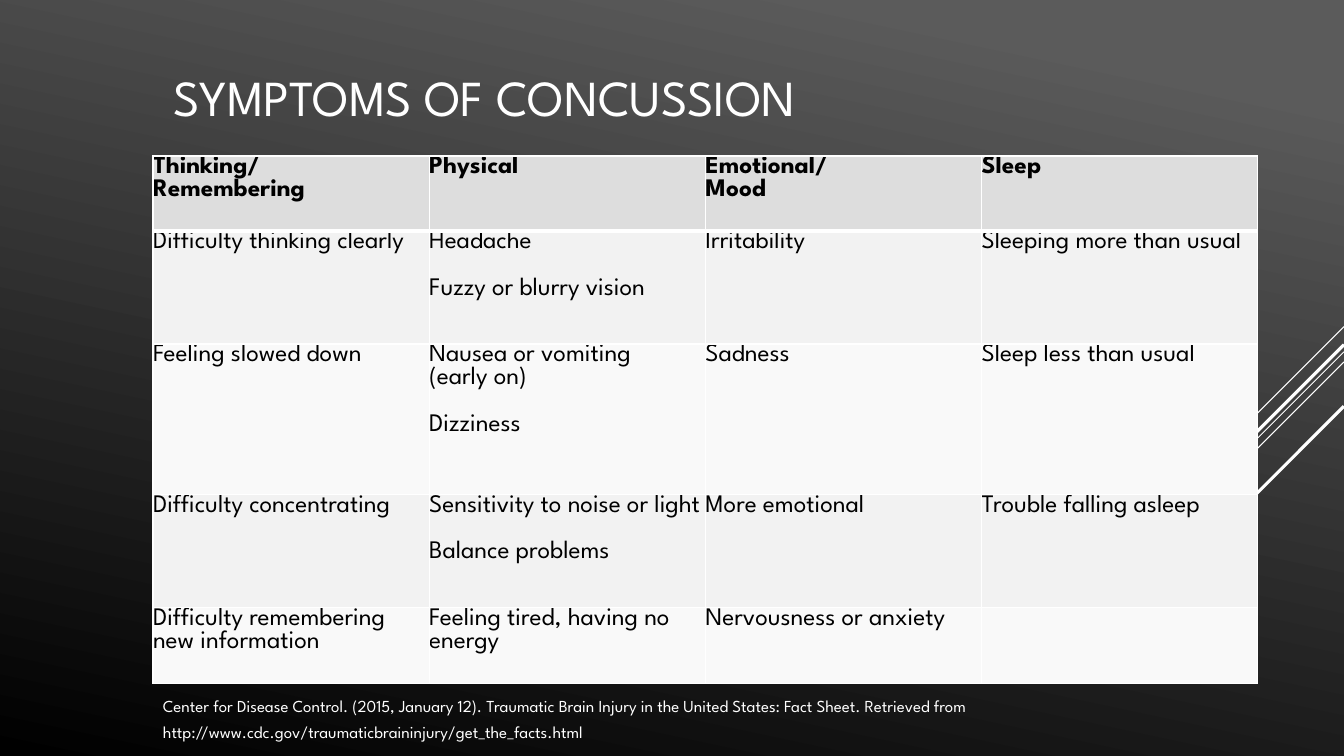
from lxml.etree import SubElement
from pptx import Presentation
from pptx.dml.color import RGBColor
from pptx.enum.shapes import MSO_CONNECTOR
from pptx.enum.text import MSO_ANCHOR
from pptx.oxml import parse_xml
from pptx.oxml.ns import nsdecls, qn
from pptx.util import Pt

FONT = "League Spartan"
WHITE = "FFFFFF"


def color(hex_text):
    return RGBColor.from_string(hex_text)


def style_text(frame, size, hex_text, bold=False):
    for paragraph in frame.paragraphs:
        paragraph.font.name = FONT
        paragraph.font.size = Pt(size)
        paragraph.font.bold = bold
        paragraph.font.color.rgb = color(hex_text)
        for run in paragraph.runs:
            run.font.name = FONT
            run.font.size = Pt(size)
            run.font.bold = bold
            run.font.color.rgb = color(hex_text)


presentation = Presentation()
presentation.slide_width = Pt(960)
presentation.slide_height = Pt(540)
slide = presentation.slides.add_slide(presentation.slide_layouts[6])

# Background
backdrop = slide.background.fill
backdrop.gradient()
backdrop.gradient_angle = 258
for stop, position, shade in zip(backdrop.gradient_stops, (0.1, 1), ("5B5B5B", "000000")):
    stop.position = position
    stop.color.rgb = color(shade)

# Diagonal rays from the right edge: start height, horizontal and vertical run, width
rays = [
    (233.3, 72, 0.75),
    (251.3, 234.7, 0.75),
    (258.5, 149.4, 0.75),
    (246.2, 137.5, 2.25),
    (290.2, 100.1, 2.25),
]
for top, reach, width in rays:
    ray = slide.shapes.add_connector(
        MSO_CONNECTOR.STRAIGHT, Pt(960), Pt(top), Pt(960 - reach), Pt(top + reach))
    ray.line.color.rgb = color(WHITE)
    ray.line.width = Pt(width)
    SubElement(ray._element.spPr, qn("a:effectLst"))

# Title
title = slide.shapes.add_textbox(Pt(116.6), Pt(0), Pt(789), Pt(138.2)).text_frame
title.word_wrap = True
title.vertical_anchor = MSO_ANCHOR.MIDDLE
title.text = "SYMPTOMS OF CONCUSSION"
style_text(title, 36, WHITE)

# Symptom table: \n starts a spaced paragraph, \v only breaks the line
symptoms = [
    ["Thinking/\vRemembering", "Physical", "Emotional/\vMood", "Sleep"],
    ["Difficulty thinking clearly", "Headache\nFuzzy or blurry vision",
     "Irritability", "Sleeping more than usual"],
    ["Feeling slowed down", "Nausea or vomiting\v(early on)\nDizziness",
     "Sadness", "Sleep less than usual"],
    ["Difficulty concentrating", "Sensitivity to noise or light\nBalance problems",
     "More emotional", "Trouble falling asleep"],
    ["Difficulty remembering new information", "Feeling tired, having no energy",
     "Nervousness or anxiety", ""],
]
row_heights = [53.8, 80.6, 107.5, 80.6, 54.5]
row_fills = ["DDDDDD", "F2F2F2", "F9F9F9", "F2F2F2", "F9F9F9"]
table = slide.shapes.add_table(
    5, 4, Pt(109.3), Pt(111.4), Pt(789.2), Pt(sum(row_heights))).table
for column in table.columns:
    column.width = Pt(197.3)

for row_index, (row, height, shade) in enumerate(zip(symptoms, row_heights, row_fills)):
    table.rows[row_index].height = Pt(height)
    for column_index, symptom in enumerate(row):
        cell = table.cell(row_index, column_index)
        cell.margin_left = cell.margin_right = cell.margin_top = cell.margin_bottom = 0
        cell.fill.solid()
        cell.fill.fore_color.rgb = color(shade)
        cell.text_frame.text = symptom
        for paragraph in cell.text_frame.paragraphs[1:]:
            paragraph.space_before = Pt(16.5)
        style_text(cell.text_frame, 18, "000000", bold=row_index == 0)

        border_widths = {"lnL": 1, "lnR": 1,
                         "lnT": 3 if row_index == 1 else 1,
                         "lnB": 3 if row_index == 0 else 1}
        for order, (side, width) in enumerate(border_widths.items()):
            border = parse_xml(
                f'<a:{side} {nsdecls("a")} w="{Pt(width)}"><a:solidFill>'
                f'<a:srgbClr val="{WHITE}"/></a:solidFill></a:{side}>')
            cell._tc.tcPr.insert(order, border)

# Citation
citation = slide.shapes.add_textbox(Pt(109.3), Pt(488.9), Pt(789.2), Pt(36)).text_frame
citation.word_wrap = True
citation.text = (
    "Center for Disease Control. (2015, January 12). Traumatic Brain Injury in the "
    "United States: Fact Sheet. Retrieved from "
    "http://www.cdc.gov/traumaticbraininjury/get_the_facts.html")
citation.paragraphs[0].line_spacing = 1.3
style_text(citation, 12, WHITE)

presentation.save("out.pptx")
